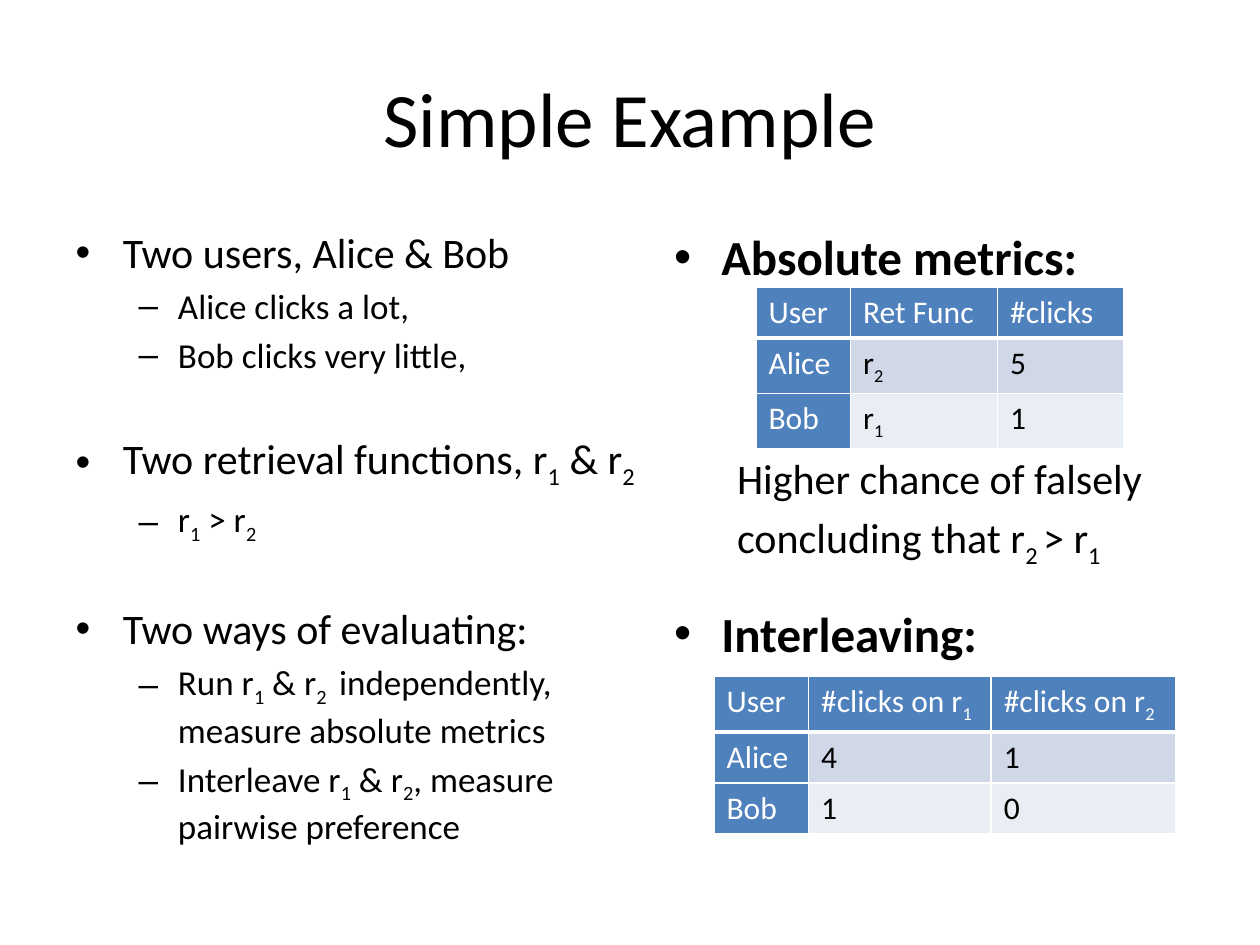
from lxml.etree import SubElement
from pptx import Presentation
from pptx.dml.color import RGBColor
from pptx.enum.text import MSO_ANCHOR, MSO_AUTO_SIZE, PP_ALIGN
from pptx.oxml.ns import qn
from pptx.util import Pt

THEME = {
    "font": "Calibri",
    "ink": "000000", "white": "FFFFFF",
    "head": "4F81BD", "bands": ("D0D8E8", "E9EDF4"),
    "title": 44, "heading": 28, "text": 24, "detail": 20, "cell": 18,
    "rule": 1, "head_rule": 3,
}

# Text between bars is subscript: "r|1|".
TITLE = "Simple Example"
# Each paragraph: level, text, type size, optional format values
SETUP = [
    (0, "Two users, Alice & Bob", "text", {}),
    (1, "Alice clicks a lot,", "detail", {}),
    (1, "Bob clicks very little,", "detail", {}),
    (0, "Two retrieval functions, r|1| & r|2", "text", {"gap": 33}),
    (1, "r|1| > r|2", "detail", {}),
    (0, "Two ways of evaluating:", "text", {"gap": 33}),
    (1, "Run r|1| & r|2 | independently, measure absolute metrics", "detail", {}),
    (1, "Interleave r|1| & r|2|, measure pairwise preference", "detail", {}),
]
METRICS = [
    (0, "Absolute metrics:", "heading", {"bold": True}),
    (1, "Higher chance of falsely", "text", {"gap": 95.5, "bullet": False}),
    (1, "concluding that r|2 |> r|1", "text", {"bullet": False}),
    (0, "Interleaving:", "heading", {"bold": True, "gap": 19.5}),
]
# Boxes are left, top, width, height.
TITLE_BOX = (36, 21.6, 648, 90)
COLUMNS = [((36, 126, 342, 356.4), SETUP), ((378, 126, 306, 356.4), METRICS)]
ROW_HEIGHT = 29.2
TABLES = [
    {"at": (432, 164), "widths": (54, 84, 72),
     "rows": [("User", "Ret Func", "#clicks"),
              ("Alice", "r|2", "5"),
              ("Bob", "r|1", "1")]},
    {"at": (408, 386.6), "widths": (54, 104.4, 105.6),
     "rows": [("User", "#clicks on r|1", "#clicks on r|2"),
              ("Alice", "4", "1"),
              ("Bob", "1", "0")]},
]


def rgb(name):
    return RGBColor.from_string(THEME.get(name, name))


def place(shape, box):
    for name, value in zip(("left", "top", "width", "height"), box):
        setattr(shape, name, Pt(value))


def write(p, text, size, color="ink", bold=False):
    for i, part in enumerate(text.split("|")):
        if not part:
            continue
        r = p.add_run()
        r.text = part
        values = {"name": THEME["font"], "size": Pt(THEME[size]), "bold": bold}
        for name, value in values.items():
            setattr(r.font, name, value)
        r.font.color.rgb = rgb(color)
        if i % 2:
            r.font._element.set("baseline", "-25000")


def fill_body(shape, box, paragraphs):
    place(shape, box)
    tf = shape.text_frame
    tf.auto_size = MSO_AUTO_SIZE.NONE
    for i, (level, text, size, extra) in enumerate(paragraphs):
        p = tf.add_paragraph() if i else tf.paragraphs[0]
        p.level = level
        if "gap" in extra:
            p.space_before = Pt(extra["gap"])
        if not extra.get("bullet", True):
            SubElement(p._p.get_or_add_pPr(), qn("a:buNone"))
        write(p, text, size, bold=extra.get("bold", False))


def set_borders(cell, widths):
    """Draw white borders; widths maps a side (L, R, T, B) to points."""
    tcPr = cell._tc.get_or_add_tcPr()
    for i, (side, width) in enumerate(widths.items()):
        ln = SubElement(tcPr, qn(f"a:ln{side}"), w=str(Pt(width)))
        fill = SubElement(ln, qn("a:solidFill"))
        SubElement(fill, qn("a:srgbClr"), val=THEME["white"])
        tcPr.insert(i, ln)  # borders come before the cell fill


def add_click_table(s, at, widths, rows):
    size = (sum(widths), ROW_HEIGHT * len(rows))
    frame = s.shapes.add_table(len(rows), len(widths), *map(Pt, at + size))
    table = frame.table
    table.first_col = True
    for column, width in zip(table.columns, widths):
        column.width = Pt(width)
    for i, row in enumerate(rows):
        for j, text in enumerate(row):
            cell = table.cell(i, j)
            is_head = i == 0 or j == 0
            band = THEME["bands"][(i - 1) % 2]
            cell.fill.solid()
            cell.fill.fore_color.rgb = rgb("head" if is_head else band)
            sides = dict.fromkeys("LRT" if i == 0 else "LR", THEME["rule"])
            sides["B"] = THEME["rule" if i else "head_rule"]
            set_borders(cell, sides)
            write(cell.text_frame.paragraphs[0], text, "cell",
                  "white" if is_head else "ink")


def main():
    prs = Presentation()
    prs.slide_width, prs.slide_height = Pt(720), Pt(540)
    s = prs.slides.add_slide(prs.slide_layouts[3])
    title, *bodies = s.placeholders
    place(title, TITLE_BOX)
    title.text_frame.vertical_anchor = MSO_ANCHOR.MIDDLE
    p = title.text_frame.paragraphs[0]
    p.alignment = PP_ALIGN.CENTER
    write(p, TITLE, "title")
    for body, (box, paragraphs) in zip(bodies, COLUMNS):
        fill_body(body, box, paragraphs)
    for body in bodies[len(COLUMNS):]:
        body.element.getparent().remove(body.element)
    for table in TABLES:
        add_click_table(s, **table)
    prs.save("out.pptx")


if __name__ == "__main__":
    main()
